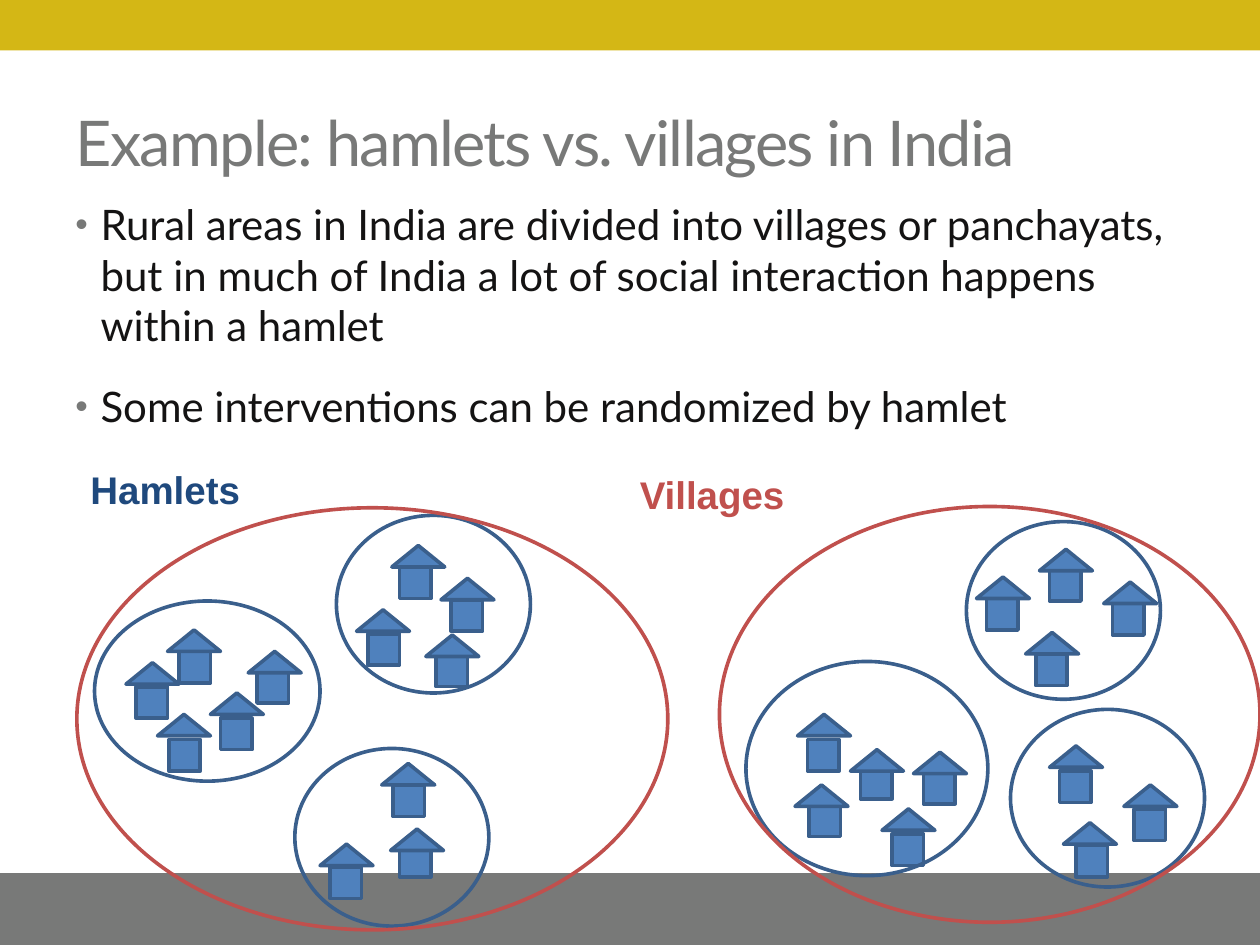
from lxml import etree
from pptx import Presentation
from pptx.dml.color import RGBColor
from pptx.enum.shapes import MSO_SHAPE
from pptx.enum.text import MSO_ANCHOR, PP_ALIGN
from pptx.oxml.ns import qn
from pptx.util import Inches, Pt

RECTANGLE = MSO_SHAPE.RECTANGLE
TRIANGLE = MSO_SHAPE.ISOSCELES_TRIANGLE
OVAL = MSO_SHAPE.OVAL
MIDDLE, TOP = MSO_ANCHOR.MIDDLE, MSO_ANCHOR.TOP
LEFT = PP_ALIGN.LEFT

GOLD, GRAY, INK = "D4B715", "787978", "141313"
BLUE, OUTLINE, NAVY, RED = "4F81BD", "3A5F8C", "1F497D", "C0504D"

BULLETS = [
    "Rural areas in India are divided into villages or panchayats, "
    "but in much of India a lot of social interaction happens within a hamlet",
    "Some interventions can be randomized by hamlet",
]

# Each house: roof left, roof top, wall left, wall top
HOUSES = [
    (1.33, 5.00, 1.42, 5.17), (1.00, 5.26, 1.08, 5.45), (1.25, 5.67, 1.34, 5.87),
    (1.67, 5.50, 1.75, 5.70), (1.97, 5.17, 2.04, 5.33),
    (3.38, 5.04, 3.46, 5.20), (3.50, 4.59, 3.58, 4.76), (2.83, 4.84, 2.92, 5.03),
    (3.11, 4.33, 3.17, 4.50),
    (3.03, 6.06, 3.12, 6.23), (3.10, 6.58, 3.17, 6.71), (2.54, 6.70, 2.62, 6.88),
    (7.25, 5.97, 7.33, 6.13), (6.33, 5.67, 6.41, 5.87), (6.31, 6.23, 6.42, 6.39),
    (6.75, 5.95, 6.83, 6.09), (7.00, 6.42, 7.08, 6.62),
    (8.33, 5.92, 8.41, 6.12), (8.44, 6.53, 8.54, 6.71), (8.92, 6.23, 9.00, 6.42),
    (7.75, 4.58, 7.83, 4.75), (8.14, 5.02, 8.22, 5.19), (8.25, 4.36, 8.33, 4.52),
    (8.76, 4.62, 8.83, 4.79),
]
HAMLETS = [
    (0.75, 4.77, 1.79, 1.43), (2.67, 4.09, 1.54, 1.41), (8.02, 5.63, 1.54, 1.41),
    (2.34, 5.94, 1.54, 1.41), (5.92, 5.25, 1.92, 1.70), (7.67, 4.14, 1.54, 1.41),
]
VILLAGES = [(5.71, 4.02, 4.29, 3.30), (0.61, 4.03, 4.69, 3.35)]


def color(value):
    return RGBColor.from_string(value)


class SlideBuilder:
    """Draws styled elements on the current slide."""

    font = "Lato"
    label_font = "Arial"
    line_width = Pt(2.08)

    def __init__(self, page):
        self.page = page

    def format_font(self, para, name, size, fill, bold=False):
        para.font.name = name
        para.font.size = Pt(size)
        para.font.color.rgb = color(fill)
        para.font.bold = bold

    def shape(self, kind, at, fill=None, line=None):
        shape = self.page.shapes.add_shape(kind, *map(Inches, at))
        shape.shadow.inherit = False
        if fill:
            shape.fill.solid()
            shape.fill.fore_color.rgb = color(fill)
        else:
            shape.fill.background()
        if line:
            shape.line.color.rgb = color(line)
            shape.line.width = self.line_width
        else:
            shape.line.fill.background()

    def title(self, text, at):
        box = self.page.shapes.title
        box.left, box.top, box.width, box.height = map(Inches, at)
        frame = box.text_frame
        frame.text = text
        frame.vertical_anchor = MIDDLE
        para = frame.paragraphs[0]
        para.alignment = LEFT
        self.format_font(para, self.font, 36, GRAY)
        para.runs[0].font._element.set("spc", "-100")

    def text_frame(self, at):
        frame = self.page.shapes.add_textbox(*map(Inches, at)).text_frame
        frame.word_wrap = True
        frame.vertical_anchor = TOP
        return frame

    def label(self, text, at, fill):
        para = self.text_frame(at).paragraphs[0]
        para.text = text
        self.format_font(para, self.label_font, 22, fill, bold=True)

    def bullets(self, texts, at):
        frame = self.text_frame(at)
        for index, text in enumerate(texts):
            para = frame.add_paragraph() if index else frame.paragraphs[0]
            para.text = text
            para.space_before = Pt(17.5 if index else 0)
            self.format_font(para, self.font, 24, INK)
            self.bullet(para)

    def bullet(self, para):
        props = para._p.get_or_add_pPr()
        props.set("marL", str(Inches(0.2)))
        props.set("indent", str(Inches(-0.2)))
        tint = etree.Element(qn("a:buClr"))
        etree.SubElement(tint, qn("a:srgbClr"), val=GRAY)
        size = etree.Element(qn("a:buSzPct"), val="85000")
        face = etree.Element(qn("a:buFont"), typeface="Arial")
        mark = etree.Element(qn("a:buChar"), char="•")
        defaults = props.find(qn("a:defRPr"))
        for element in (tint, size, face, mark):
            defaults.addprevious(element)

    def house(self, roof_left, roof_top, wall_left, wall_top):
        self.shape(RECTANGLE, (wall_left, wall_top, 0.25, 0.25), BLUE, OUTLINE)
        self.shape(TRIANGLE, (roof_left, roof_top, 0.42, 0.17), BLUE, OUTLINE)


def main():
    deck = Presentation()
    deck.slide_width, deck.slide_height = Inches(10), Inches(7.5)
    slide = SlideBuilder(deck.slides.add_slide(deck.slide_layouts[5]))

    slide.shape(RECTANGLE, (0, 0, 10, 0.4), GOLD)
    slide.shape(RECTANGLE, (-0.03, 6.93, 10.12, 0.6), GRAY)
    slide.title("Example: hamlets vs. villages in India", (0.5, 0.58, 9, 1.08))
    slide.bullets(BULLETS, (0.5, 1.53, 9.03, 1.83))
    for house in HOUSES:
        slide.house(*house)
    for hamlet in HAMLETS:
        slide.shape(OVAL, hamlet, line=OUTLINE)
    slide.label("Hamlets", (0.62, 3.65, 1.74, 0.47), NAVY)
    for village in VILLAGES:
        slide.shape(OVAL, village, line=RED)
    slide.label("Villages", (4.98, 3.69, 1.74, 0.47), RED)

    deck.save("out.pptx")


if __name__ == "__main__":
    main()
